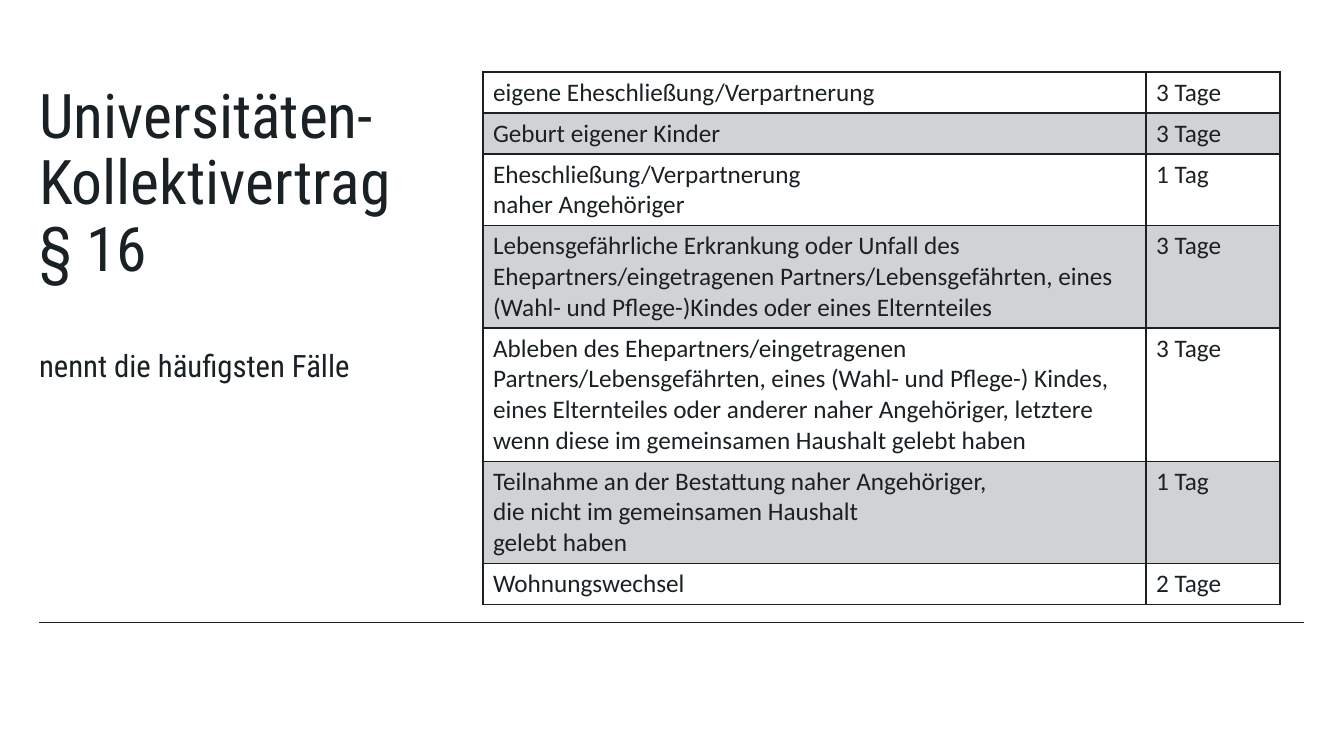
"""Slide on the leave days named in § 16 of the universities' collective agreement."""
from dataclasses import dataclass

from lxml import etree
from pptx import Presentation
from pptx import util as u
from pptx.dml.color import RGBColor
from pptx.enum import shapes, text
from pptx.oxml import ns

HEADING = ["Universitäten-", "Kollektivertrag", "§ 16"]
SUBHEADING = "nennt die häufigsten Fälle"
LEAVE_CASES = [
    ("eigene Eheschließung/Verpartnerung", "3 Tage", 1),
    ("Geburt eigener Kinder", "3 Tage", 1),
    ("Eheschließung/Verpartnerung\nnaher Angehöriger", "1 Tag", 2),
    ("Lebensgefährliche Erkrankung oder Unfall des Ehepartners/eingetragenen "
     "Partners/Lebensgefährten, eines (Wahl- und Pflege-)Kindes oder eines Elternteiles",
     "3 Tage", 3),
    ("Ableben des Ehepartners/eingetragenen Partners/Lebensgefährten, eines "
     "(Wahl- und Pflege-) Kindes, eines Elternteiles oder anderer naher Angehöriger, letztere\n"
     "wenn diese im gemeinsamen Haushalt gelebt haben", "3 Tage", 4),
    ("Teilnahme an der Bestattung naher Angehöriger,\n"
     "die nicht im gemeinsamen Haushalt\ngelebt haben", "1 Tag", 3),
    ("Wohnungswechsel", "2 Tage", 1),
]


@dataclass(frozen=True)
class Theme:
    ink: str = "1A2124"
    band_alpha: int = 20
    title_font: str = "Roboto Condensed"
    table_font: str = "Calibri"
    heading: int = 44
    subheading: int = 22
    table: int = 18


THEME = Theme()
SLIDE_W, SLIDE_H = 1344, 756
TITLE_BOX = (39, 39, 432, 391)
TABLE_X, TABLE_Y = 483, 72
COLUMNS = (663, 134)
LINE_H, CELL_PAD = 30, 11
RULE_X1, RULE_X2, RULE_Y = 39, 1304, 622


def px(length):
    return u.Emu(round(length * 12192000 / SLIDE_W))


def style(paragraph, font, size):
    for run in paragraph.runs:
        run.font.name = font
        run.font.size = u.Pt(size)
        run.font.color.rgb = RGBColor.from_string(THEME.ink)


def add_borders(cell, bottom):
    properties = cell._tc.get_or_add_tcPr()
    for place, (side, width) in enumerate([("L", 1), ("R", 1), ("T", 1), ("B", bottom)]):
        border = etree.Element(ns.qn(f"a:ln{side}"), w=str(u.Pt(width)))
        fill = etree.SubElement(border, ns.qn("a:solidFill"))
        etree.SubElement(fill, ns.qn("a:srgbClr"), val=THEME.ink)
        properties.insert(place, border)


def fill_cell(cell, banded):
    if not banded:
        cell.fill.background()
        return
    cell.fill.solid()
    cell.fill.fore_color.rgb = RGBColor.from_string(THEME.ink)
    color = cell._tc.tcPr.find(f"{ns.qn('a:solidFill')}/{ns.qn('a:srgbClr')}")
    etree.SubElement(color, ns.qn("a:alpha"), val=str(THEME.band_alpha * 1000))


def add_rule(slide):
    rule = slide.shapes.add_connector(
        shapes.MSO_CONNECTOR.STRAIGHT, px(RULE_X1), px(RULE_Y), px(RULE_X2), px(RULE_Y))
    rule.line.color.rgb = RGBColor.from_string(THEME.ink)
    rule.line.width = u.Pt(0.5)
    etree.SubElement(rule._element.spPr, ns.qn("a:effectLst"))


def add_title(slide):
    title = slide.shapes.title
    title.left, title.top, title.width, title.height = map(px, TITLE_BOX)
    frame = title.text_frame
    frame.text = "\v".join(HEADING)
    frame.word_wrap = True
    frame.auto_size = text.MSO_AUTO_SIZE.NONE
    frame.vertical_anchor = text.MSO_ANCHOR.MIDDLE
    frame.margin_left = 0
    heading, subheading = frame.paragraphs[0], frame.add_paragraph()
    subheading.text = SUBHEADING
    subheading.space_before = u.Pt(47)
    for paragraph, size in ((heading, THEME.heading), (subheading, THEME.subheading)):
        paragraph.alignment = text.PP_ALIGN.LEFT
        paragraph.line_spacing = 0.9
        style(paragraph, THEME.title_font, size)


def add_leave_table(slide):
    heights = [LINE_H * lines + CELL_PAD for *_, lines in LEAVE_CASES]
    leave = slide.shapes.add_table(
        len(LEAVE_CASES), len(COLUMNS), px(TABLE_X), px(TABLE_Y),
        px(sum(COLUMNS)), px(sum(heights))).table
    leave.first_row = leave.horz_banding = False
    for column, width in zip(leave.columns, COLUMNS):
        column.width = px(width)
    for index, (reason, days, _) in enumerate(LEAVE_CASES):
        leave.rows[index].height = px(heights[index])
        for cell, wording in zip(leave.rows[index].cells, (reason, days)):
            cell.text = wording
            for paragraph in cell.text_frame.paragraphs:
                style(paragraph, THEME.table_font, THEME.table)
            fill_cell(cell, index % 2 == 1)
            add_borders(cell, 2 if index == 0 else 1)


def main():
    deck = Presentation()
    deck.slide_width, deck.slide_height = px(SLIDE_W), px(SLIDE_H)
    slide = deck.slides.add_slide(deck.slide_layouts[5])
    add_rule(slide)
    add_title(slide)
    add_leave_table(slide)
    deck.save("out.pptx")


if __name__ == "__main__":
    main()
